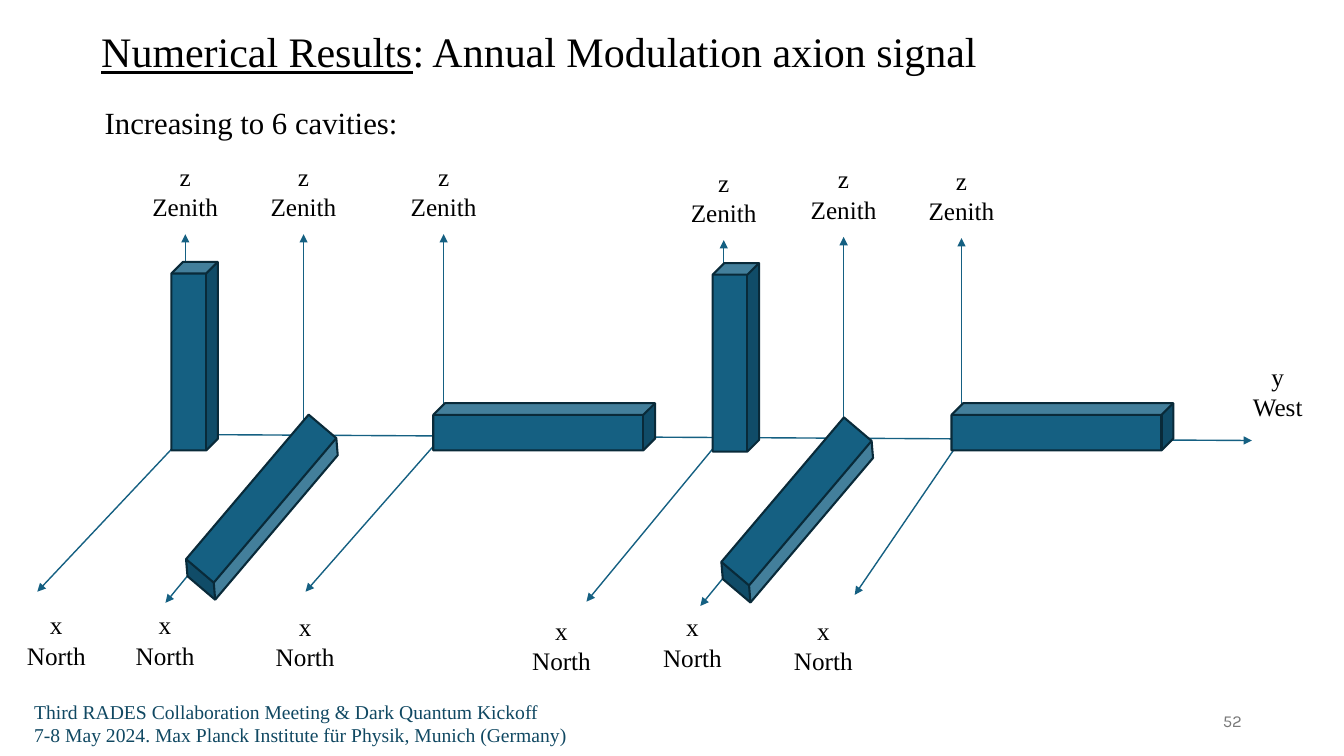
from lxml import etree
from pptx import Presentation
from pptx.dml.color import RGBColor
from pptx.enum.shapes import MSO_CONNECTOR as CONN, MSO_SHAPE as SHAPE
from pptx.enum.text import MSO_ANCHOR as ANCHOR, PP_ALIGN as ALIGN
from pptx.oxml.ns import qn
from pptx.util import Cm, Pt

BLACK = RGBColor(0x00, 0x00, 0x00)
BLUE = RGBColor(0x15, 0x60, 0x82)
EDGE = RGBColor(0x09, 0x2A, 0x39)
FOOTER = RGBColor(0x10, 0x48, 0x62)
GREY = RGBColor(0x79, 0x79, 0x79)

LABEL_W, LABEL_H = 2.84, 1.8
ZENITH_LENGTH = 5.05
ZENITH_GAP = 1.97

UPRIGHT = (1.17, 4.75, 0)
TILTED = (5.08, 1.22, 130.3)
FLAT = (5.59, 1.19, 0)

# origin, start and tip of the north axis, north label, cavity form, cavity corner
CAVITIES = [
    ((4.67, 10.95), (4.67, 10.95), (0.94, 14.91), (0, 15.24), UPRIGHT, (4.32, 6.6)),
    ((7.65, 10.95), (7.65, 10.95), (4.17, 15.19), (2.74, 15.24), TILTED, (4.06, 12.17)),
    ((11.18, 10.95), (11.18, 10.95), (7.7, 14.91), (6.27, 15.27), FLAT, (10.92, 10.16)),
    ((18.24, 11.1), (18.26, 10.95), (14.78, 15.16), (12.73, 15.37), UPRIGHT, (17.96, 6.63)),
    ((21.26, 11.02), (21.13, 11.02), (17.65, 15.27), (16.03, 15.29), TILTED, (17.55, 12.24)),
    ((24.23, 11.05), (24.23, 11.05), (21.54, 14.99), (19.33, 15.37), FLAT, (23.98, 10.16)),
]


def add_text(s, text, x, y, w, h, size=18, font="Times New Roman", color=BLACK,
             align=ALIGN.LEFT, anchor=ANCHOR.TOP, underlined=""):
    tf = s.shapes.add_textbox(Cm(x), Cm(y), Cm(w), Cm(h)).text_frame
    tf.word_wrap = True
    tf.vertical_anchor = anchor
    for i, line in enumerate(text.split("\n")):
        p = tf.paragraphs[0] if i == 0 else tf.add_paragraph()
        p.alignment = align
        for part in filter(None, (underlined, line.removeprefix(underlined))):
            r = p.add_run()
            r.text = part
            r.font.size = Pt(size)
            r.font.name = font
            r.font.color.rgb = color
            if part == underlined:
                r.font.underline = True


def add_label(s, axis, direction, x, y):
    add_text(s, f"{axis}\n{direction}", x, y, LABEL_W, LABEL_H, align=ALIGN.CENTER)


def add_axis(s, start, tip):
    line = s.shapes.add_connector(CONN.STRAIGHT, *map(Cm, start + tip))
    line.line.color.rgb = BLUE
    line.line.width = Pt(1)
    etree.SubElement(line.line._get_or_add_ln(), qn("a:tailEnd"), type="triangle")
    etree.SubElement(line._element.spPr, qn("a:effectLst"))


def add_cavity(s, form, corner):
    w, h, angle = form
    sp = s.shapes.add_shape(SHAPE.CUBE, *map(Cm, corner), Cm(w), Cm(h))
    sp.rotation = angle
    sp.shadow.inherit = False
    sp.fill.solid()
    sp.fill.fore_color.rgb = BLUE
    sp.line.color.rgb = EDGE
    sp.line.width = Pt(1.5)


def main():
    prs = Presentation()
    prs.slide_width, prs.slide_height = Cm(33.87), Cm(19.05)
    s = prs.slides.add_slide(prs.slide_layouts[6])

    add_text(s, "Numerical Results: Annual Modulation axion signal", 0, 0.53, 27.18, 1.55,
             size=30, align=ALIGN.CENTER, underlined="Numerical Results")
    add_text(s, "Increasing to 6 cavities:", 2.39, 2.49, 28.09, 1.19, size=22)

    add_axis(s, (4.67, 10.95), (31.55, 11.1))
    add_label(s, "y", "West", 30.78, 8.97)
    for (x, y), north_start, north_tip, north_label, _, _ in CAVITIES:
        top = y - ZENITH_LENGTH
        add_axis(s, (x, y), (x, top))
        add_axis(s, north_start, north_tip)
        add_label(s, "z", "Zenith", x - LABEL_W / 2, top - ZENITH_GAP)
        add_label(s, "x", "North", *north_label)
    for *_, form, corner in CAVITIES:
        add_cavity(s, form, corner)

    add_text(s, "Third RADES Collaboration Meeting & Dark Quantum Kickoff\n"
             "7-8 May 2024. Max Planck Institute für Physik, Munich (Germany)",
             0.61, 17.5, 15.11, 1.07, size=14, color=FOOTER)
    add_text(s, "52", 23.93, 17.65, 7.62, 1.02, size=12, font="Karla", color=GREY,
             align=ALIGN.RIGHT, anchor=ANCHOR.MIDDLE)
    prs.save("out.pptx")


if __name__ == "__main__":
    main()
